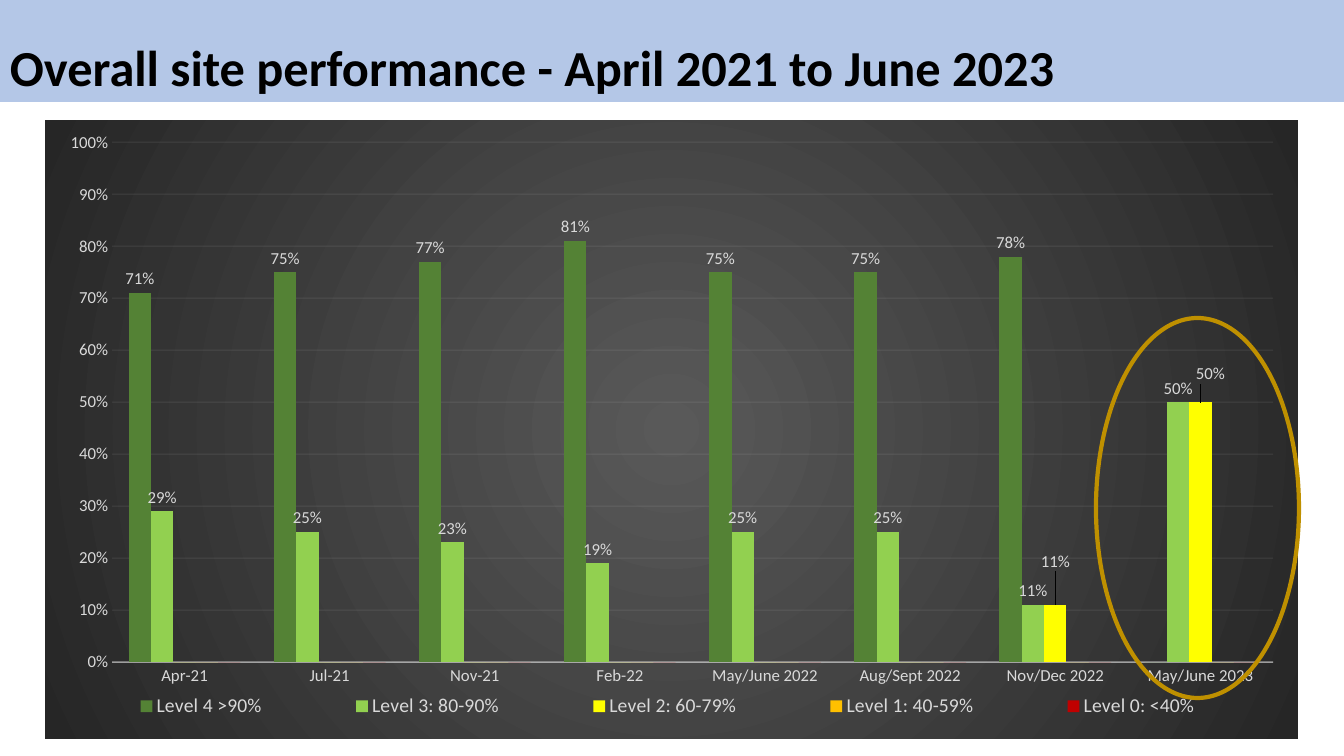
from copy import deepcopy

from pptx import Presentation
from pptx import util as u
from pptx.chart.data import CategoryChartData
from pptx.dml.color import RGBColor
from pptx.enum import chart as ch, shapes, text
from pptx.oxml import parse_xml
from pptx.oxml.ns import nsdecls

THEME = dict(
    font="Calibri", band="B4C7E7", title="000000", label="D9D9D9",
    rule="F2F2F2", ring="BF9000", glow="595959", edge="262626",
    title_size=36, legend_size=14, label_size=12,
)
PX = u.Inches(1) / 100.8


def px(*lengths):
    return [round(length * PX) for length in lengths]


def layout_xml(**fractions):
    modes = "".join(f'<c:{k}Mode val="edge"/>' for k in "xy") if "w" in fractions else ""
    target = '<c:layoutTarget val="inner"/>' if fractions.pop("inner", False) else ""
    values = "".join(f'<c:{k} val="{v}"/>' for k, v in fractions.items())
    return parse_xml(f'<c:layout {nsdecls("c")}><c:manualLayout>{target}{modes}{values}'
                     '</c:manualLayout></c:layout>')


deck = Presentation()
deck.slide_width, deck.slide_height = px(1344, 756)
slide = deck.slides.add_slide(deck.slide_layouts[6])

# Title band
band = slide.shapes.add_textbox(*px(0, 0, 1344, 102))
band.fill.solid()
band.fill.fore_color.rgb = RGBColor.from_string(THEME["band"])
band.text_frame.word_wrap = True
band.text_frame.vertical_anchor = text.MSO_ANCHOR.BOTTOM
heading = band.text_frame.paragraphs[0]
heading.text = "Overall site performance - April 2021 to June 2023"
heading.line_spacing = 0.9
heading.font.color.rgb = RGBColor.from_string(THEME["title"])
for key, value in dict(name=THEME["font"], size=u.Pt(THEME["title_size"]), bold=True).items():
    setattr(heading.font, key, value)

# Share of sites at each level: name, colour, values
levels = [
    ("Level 4 >90%", "548235", [0.71, 0.75, 0.77, 0.81, 0.75, 0.75, 0.78, 0]),
    ("Level 3: 80-90%", "92D050", [0.29, 0.25, 0.23, 0.19, 0.25, 0.25, 0.11, 0.5]),
    ("Level 2: 60-79%", "FFFF00", [0] * 6 + [0.11, 0.5]),
    ("Level 1: 40-59%", "FFC000", [0] * 8),
    ("Level 0: <40%", "C00000", [0] * 8),
]
performance = CategoryChartData(number_format="0%")
performance.categories = ["Apr-21", "Jul-21", "Nov-21", "Feb-22", "May/June 2022",
                          "Aug/Sept 2022", "Nov/Dec 2022", "May/June 2023"]
for name, _, shares in levels:
    performance.add_series(name, shares)
chart = slide.shapes.add_chart(ch.XL_CHART_TYPE.COLUMN_CLUSTERED,
                               *px(45, 120, 1253, 619), performance).chart
chart.has_title = False
chart.has_legend = True
chart.legend.position = ch.XL_LEGEND_POSITION.BOTTOM
chart.legend.include_in_layout = False
bars = chart.plots[0]
for key, value in dict(gap_width=150, overlap=0, vary_by_categories=False).items():
    setattr(bars, key, value)

# Axes
periods, scale = chart.category_axis, chart.value_axis
for axis in (periods, scale):
    axis.major_tick_mark = axis.minor_tick_mark = ch.XL_TICK_MARK.NONE
for key, value in dict(minimum_scale=0, maximum_scale=1, major_unit=0.1,
                       has_major_gridlines=True).items():
    setattr(scale, key, value)
scale.tick_labels.number_format = "0%"
scale.tick_labels.number_format_is_linked = False
scale.format.line.fill.background()
for line, width, alpha, place in (
    (periods.format.line, 1, 54, "c:catAx/c:spPr"),
    (scale.major_gridlines.format.line, 0.75, 10, "c:majorGridlines"),
):
    line.width = u.Pt(width)
    line.color.rgb = RGBColor.from_string(THEME["rule"])
    tint = chart.element.xpath(f".//{place}//a:srgbClr")[0]
    tint.append(parse_xml(f'<a:alpha {nsdecls("a")} val="{alpha * 1000}"/>'))

# Bar colours and value labels
fonts = [(chart.font, THEME["label_size"]), (chart.legend.font, THEME["legend_size"]),
         (periods.tick_labels.font, THEME["label_size"]),
         (scale.tick_labels.font, THEME["label_size"])]
for series, (_, colour, shares) in zip(bars.series, levels):
    series.format.fill.solid()
    series.format.fill.fore_color.rgb = RGBColor.from_string(colour)
    series.invert_if_negative = False
    if any(shares):
        for key, value in dict(show_value=True, number_format="0%",
                               number_format_is_linked=False,
                               position=ch.XL_LABEL_POSITION.OUTSIDE_END).items():
            setattr(series.data_labels, key, value)
        fonts.append((series.data_labels.font, THEME["label_size"]))
for font, size in fonts:
    font.name, font.size = THEME["font"], u.Pt(size)
    font.color.rgb = RGBColor.from_string(THEME["label"])

# Zero labels are dropped; two Level 2 labels are moved clear of their neighbours
moved = {(2, 6): dict(x=0, y=-0.048), (2, 7): dict(x=0.008, y=-0.023)}
for number, (series, (_, _, shares)) in enumerate(zip(bars.series, levels)):
    if not any(shares):
        continue
    labels = series.data_labels._element
    shared = [part for part in labels if not part.tag.endswith("showLeaderLines")]
    special = []
    for point, share in enumerate(shares):
        label = parse_xml(f'<c:dLbl {nsdecls("c")}><c:idx val="{point}"/></c:dLbl>')
        if share == 0:
            label.append(parse_xml(f'<c:delete {nsdecls("c")} val="1"/>'))
        elif (number, point) in moved:
            label.append(layout_xml(**moved[number, point]))
            label.extend(deepcopy(part) for part in shared)
        else:
            continue
        special.append(label)
    labels[0:0] = special

# Plot and legend places
plot_area = chart.element.xpath(".//c:plotArea")[0]
legend = chart.element.xpath(".//c:legend")[0]
for old in plot_area.xpath("c:layout") + legend.xpath("c:layout"):
    old.getparent().remove(old)
plot_area.insert(0, layout_xml(inner=True, x=0.0535, y=0.036, w=0.9266, h=0.84))
legend.insert(1, layout_xml(x=0.0064, y=0.917, w=0.981, h=0.06))

# Dark radial background
stops = "".join(f'<a:gs pos="{at}"><a:srgbClr val="{THEME[key]}"/></a:gs>'
                for at, key in ((0, "glow"), (100000, "edge")))
centre = " ".join(f'{side}="50000"' for side in "ltrb")
chart.element.xpath("c:chart")[0].addnext(parse_xml(
    f'<c:spPr {nsdecls("c", "a")}><a:gradFill><a:gsLst>{stops}</a:gsLst>'
    f'<a:path path="circle"><a:fillToRect {centre}/></a:path></a:gradFill>'
    '<a:ln><a:noFill/></a:ln></c:spPr>'))

# Ring around the latest period
ring = slide.shapes.add_shape(shapes.MSO_SHAPE.FLOWCHART_CONNECTOR, *px(1096, 318, 203, 380))
ring.shadow.inherit = False
ring.fill.background()
ring.line.color.rgb = RGBColor.from_string(THEME["ring"])
ring.line.width = u.Pt(3)

deck.save("out.pptx")
